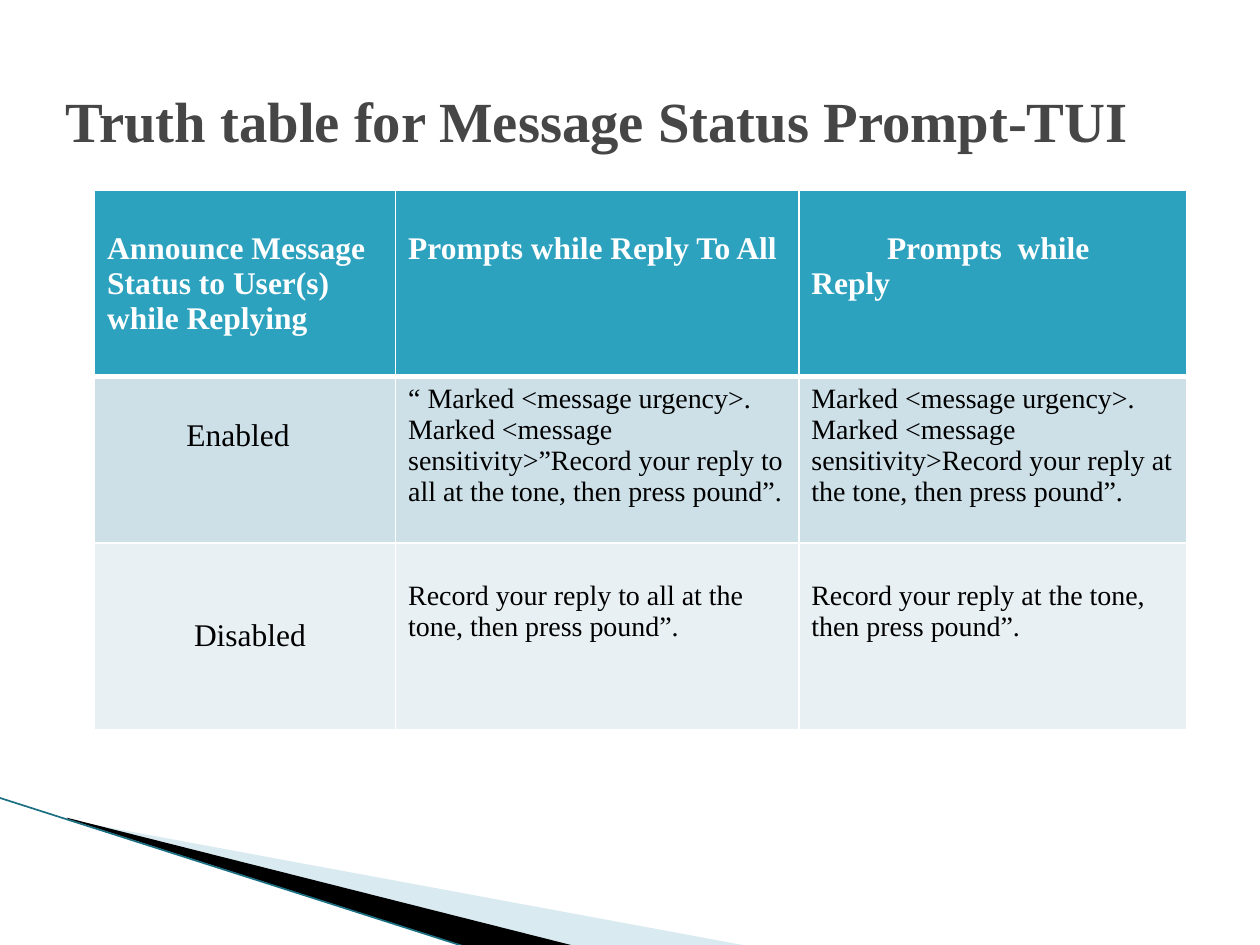
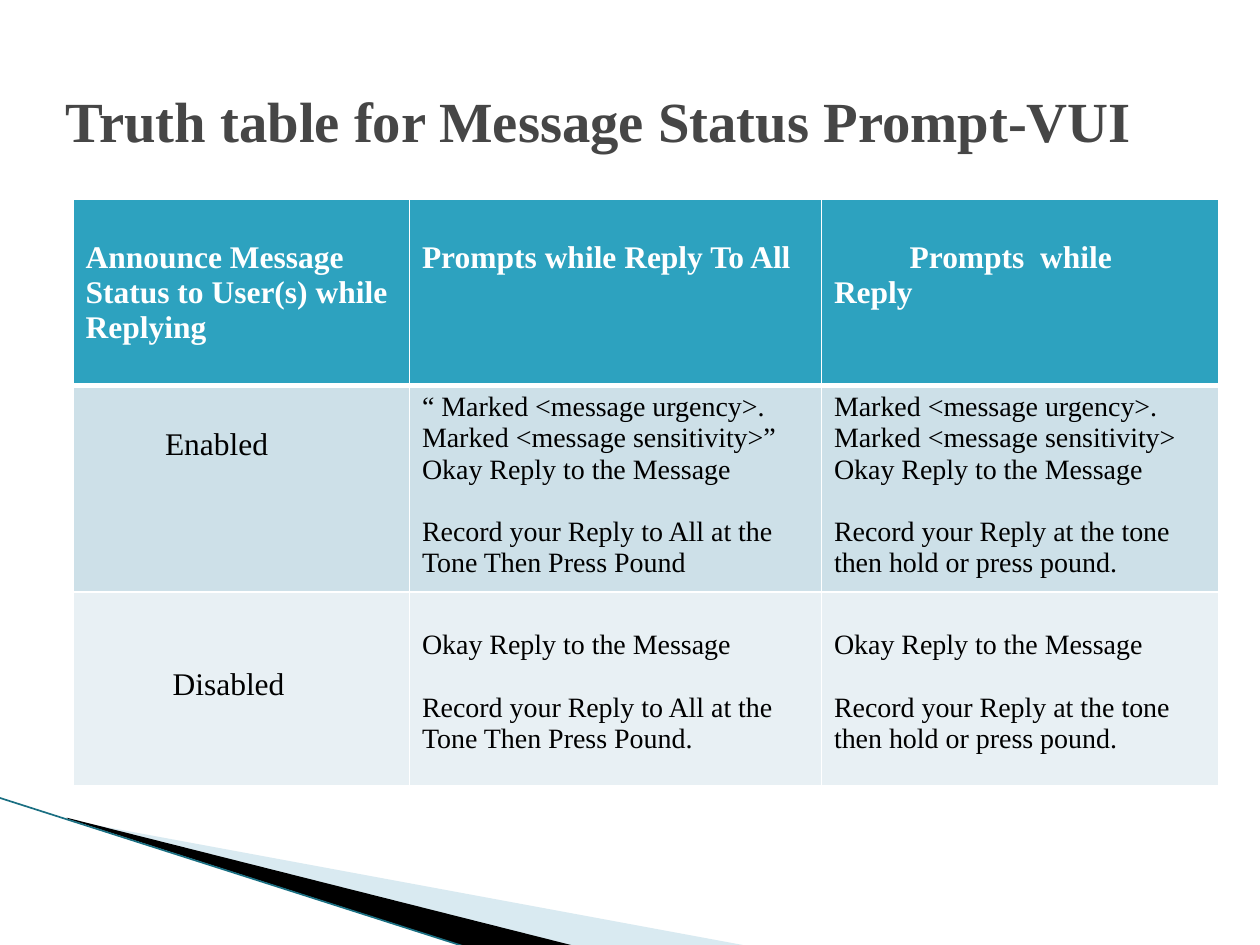
import lxml.etree
import pptx
import pptx.dml.color
import pptx.enum.shapes
import pptx.enum.text
import pptx.oxml
import pptx.oxml.ns
import pptx.util

Inches, Pt = pptx.util.Inches, pptx.util.Pt
FONT = "Times New Roman"
WHITE, BLACK, TITLE_GREY = "FFFFFF", "000000", "464646"
ROW_FILLS = ["2DA2BF", "CDE0E8", "E8F0F4"]
BLOCK_GAP = 17.7

HEADINGS = [
    "Announce Message Status to User(s) while Replying",
    "Prompts while Reply To All",
    "Prompts  while  Reply",
]
LABELS = ["Enabled", "Disabled"]
LABEL_MARGINS = [(0.73, 0.33), (0.79, 0.6)]
PROMPT_TOPS = [0.05, 0.3]

OKAY = "Okay Reply to the Message"
HOLD = "Record your Reply at the tone then hold or press pound."

PAGES = [
    {
        "title": "Truth table for Message Status Prompt-TUI",
        "corner": (0.75, 1.51),
        "widths": [2.39, 3.2, 3.08],
        "heights": [1.48, 1.32, 1.48],
        "prompts": [
            [
                [["“ Marked <message urgency>. Marked <message sensitivity>”"
                  "Record your reply to all at the tone, then press pound”."]],
                [["Marked <message urgency>. Marked <message sensitivity>"
                  "Record your reply at the tone, then press pound”."]],
            ],
            [
                [["Record your reply to all at the tone, then press pound”."]],
                [["Record your reply at the tone, then press pound”."]],
            ],
        ],
    },
    {
        "title": "Truth table for Message Status Prompt-VUI",
        "corner": (0.58, 1.58),
        "widths": [2.67, 3.27, 3.15],
        "heights": [1.48, 1.64, 1.54],
        "prompts": [
            [
                [["“ Marked <message urgency>. Marked <message sensitivity>” " + OKAY],
                 ["Record your Reply to All at the Tone Then Press Pound"]],
                [["Marked <message urgency>. Marked <message sensitivity>", OKAY], [HOLD]],
            ],
            [
                [[OKAY], ["Record your Reply to All at the Tone Then Press Pound."]],
                [[OKAY], [HOLD]],
            ],
        ],
    },
]

WEDGES = [
    ("A0CBDC", 40, [(0.55, 6.51), (5.95, 7.51), (4.56, 7.51), (0.55, 6.5)]),
    (BLACK, 100, [(0.53, 6.49), (4.57, 7.51), (3.72, 7.52), (0.54, 6.5)]),
]
EDGE = ("1A6F82", [-0.01, 6.33, 3.71, 7.52])


def color(value):
    """Turn a hex string into a colour."""
    return pptx.dml.color.RGBColor.from_string(value)


def set_font(font, size, value, bold=False):
    """Apply the deck font."""
    font.name, font.size, font.bold = FONT, Pt(size), bold
    font.color.rgb = color(value)


def add_corner(page):
    """Draw the wedges and the edge line at the lower left."""
    for fill, alpha, points in WEDGES:
        corners = [(Inches(x), Inches(y)) for x, y in points]
        builder = page.shapes.build_freeform(*corners[0])
        builder.add_line_segments(corners[1:])
        wedge = builder.convert_to_shape()
        wedge.shadow.inherit = False
        wedge.line.fill.background()
        wedge.fill.solid()
        wedge.fill.fore_color.rgb = color(fill)
        if alpha < 100:
            tint = wedge.fill._xPr.find(".//" + pptx.oxml.ns.qn("a:srgbClr"))
            lxml.etree.SubElement(tint, pptx.oxml.ns.qn("a:alpha"), val=str(alpha * 1000))
    value, ends = EDGE
    edge = page.shapes.add_connector(
        pptx.enum.shapes.MSO_CONNECTOR.STRAIGHT, *[Inches(end) for end in ends])
    edge.line.color.rgb = color(value)
    edge.line.width = Pt(0.95)
    lxml.etree.SubElement(edge._element.spPr, pptx.oxml.ns.qn("a:effectLst"))


def add_title(page, text):
    """Place and format the title."""
    title = page.shapes.title
    title.left, title.top = Inches(0.42), Inches(0.33)
    title.width, title.height = Inches(9), Inches(1.25)
    frame = title.text_frame
    frame.text = text
    frame.word_wrap = True
    frame.auto_size = pptx.enum.text.MSO_AUTO_SIZE.NONE
    frame.vertical_anchor = pptx.enum.text.MSO_ANCHOR.MIDDLE
    para = frame.paragraphs[0]
    para.alignment = pptx.enum.text.PP_ALIGN.LEFT
    set_font(para.font, 32.4, TITLE_GREY, True)


def style_cell(cell, row):
    """Give a cell white borders and the fill of its row."""
    properties = cell._tc.get_or_add_tcPr()
    borders = {"lnL": 1, "lnR": 1}
    if row == 0:
        borders["lnT"] = 1
    borders["lnB"] = 3 if row == 0 else 1
    for side, width in borders.items():
        line = lxml.etree.SubElement(
            properties, pptx.oxml.ns.qn("a:" + side), w=str(Pt(width)))
        solid = lxml.etree.SubElement(line, pptx.oxml.ns.qn("a:solidFill"))
        lxml.etree.SubElement(solid, pptx.oxml.ns.qn("a:srgbClr"), val=WHITE)
    cell.fill.solid()
    cell.fill.fore_color.rgb = color(ROW_FILLS[row])


def fill_cell(cell, blocks, size, value, bold, left, top):
    """Write blocks of paragraphs, with a line's gap between blocks."""
    cell.margin_left, cell.margin_top = Inches(left), Inches(top)
    frame = cell.text_frame
    lines = [(text, number > 0 and place == 0)
             for number, block in enumerate(blocks) for place, text in enumerate(block)]
    for number, (text, gap) in enumerate(lines):
        para = frame.add_paragraph() if number else frame.paragraphs[0]
        para.text = text
        if gap:
            para.space_before = Pt(BLOCK_GAP)
        set_font(para.font, size, value, bold)


def add_truth_table(page, content):
    """Build the table of prompts."""
    widths, heights = content["widths"], content["heights"]
    left, top = content["corner"]
    table = page.shapes.add_table(
        len(heights), len(widths), Inches(left), Inches(top),
        Inches(sum(widths)), Inches(sum(heights))).table
    for column, width in zip(table.columns, widths):
        column.width = Inches(width)
    for row, height in zip(table.rows, heights):
        row.height = Inches(height)
    for row in range(len(heights)):
        for column in range(len(widths)):
            style_cell(table.cell(row, column), row)

    for column, heading in enumerate(HEADINGS):
        fill_cell(table.cell(0, column), [[heading]], 18, WHITE, True, 0.1, 0.33)
    reply = table.cell(0, 2)
    reply.margin_right = Inches(0.2)
    reply.text_frame.paragraphs[0]._p.get_or_add_pPr().set("indent", str(Inches(0.6)))

    for row, label in enumerate(LABELS):
        fill_cell(table.cell(row + 1, 0), [[label]], 18, BLACK, False, *LABEL_MARGINS[row])
        for column, blocks in enumerate(content["prompts"][row], 1):
            fill_cell(table.cell(row + 1, column), blocks, 16, BLACK, False,
                      0.1, PROMPT_TOPS[row])


def main():
    """Build and save the deck."""
    deck = pptx.Presentation()
    deck.slide_width, deck.slide_height = Inches(10), Inches(7.5)
    for content in PAGES:
        page = deck.slides.add_slide(deck.slide_layouts[5])
        add_corner(page)
        add_truth_table(page, content)
        add_title(page, content["title"])
    deck.save("out.pptx")


if __name__ == "__main__":
    main()
